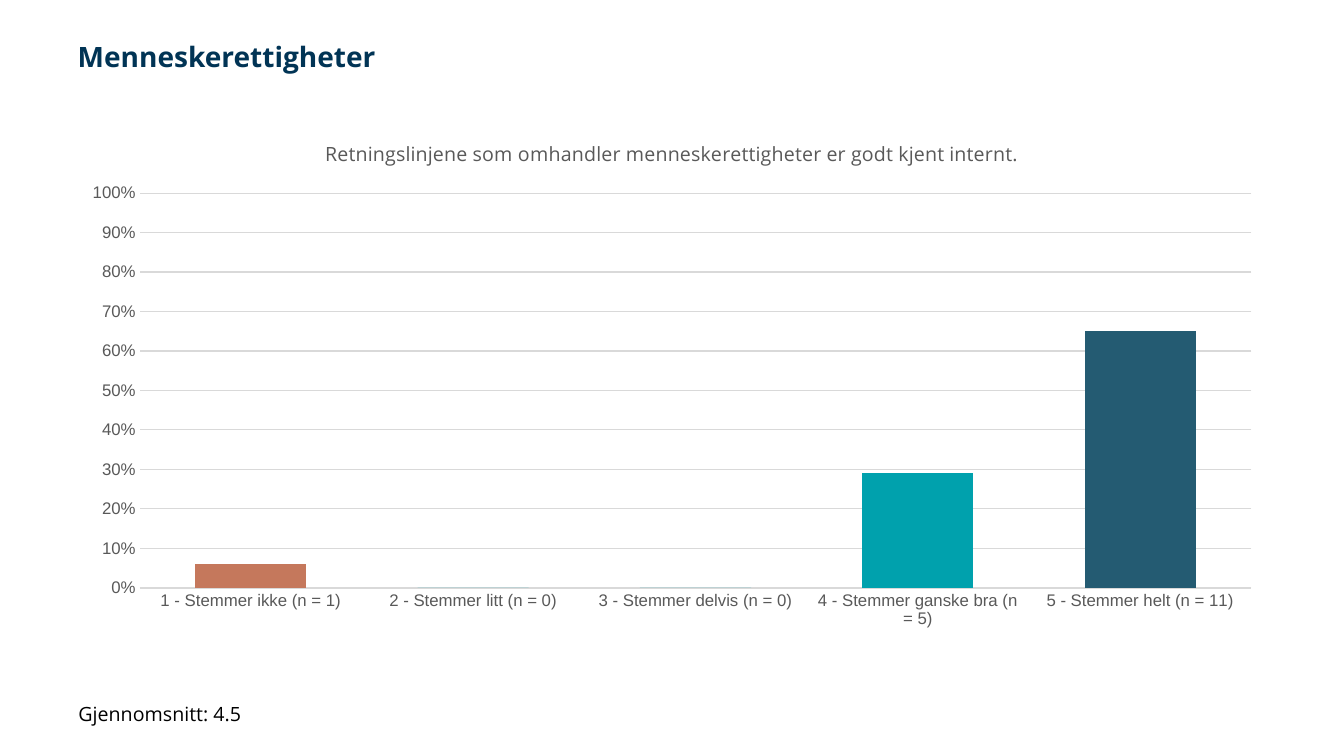
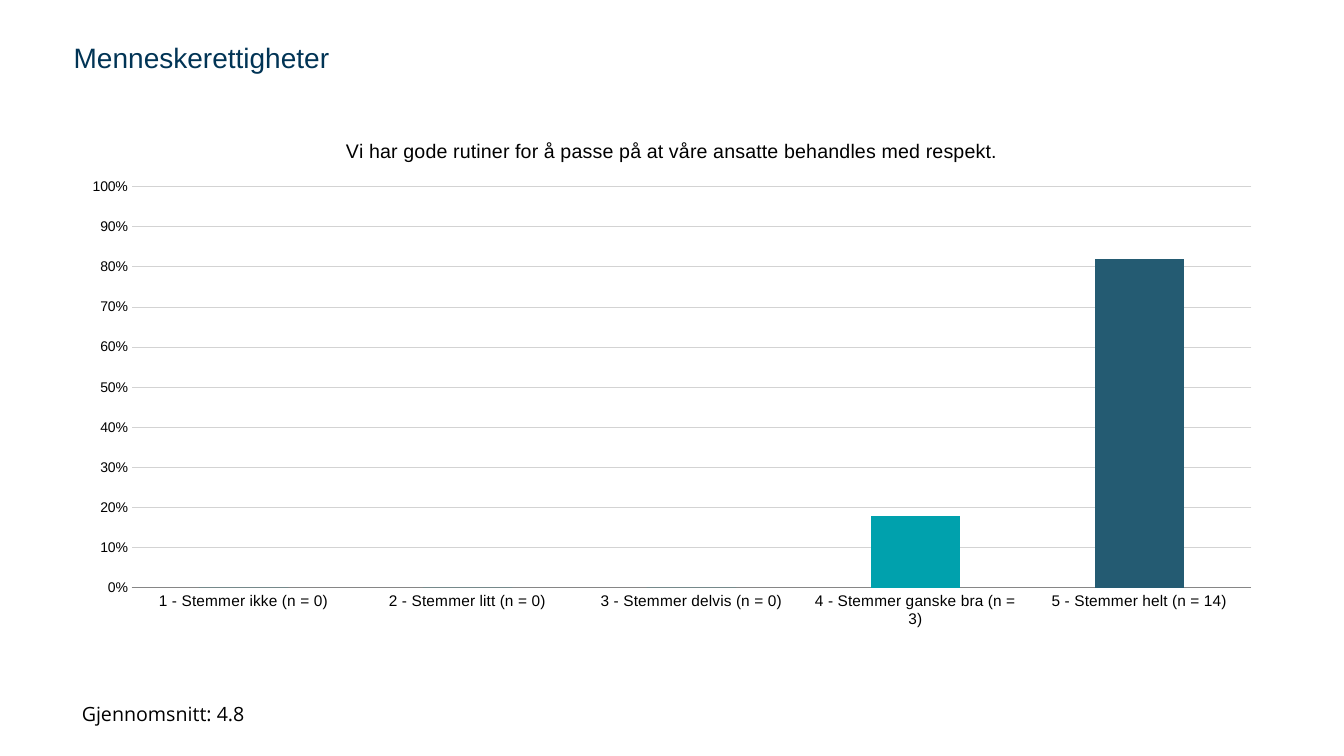
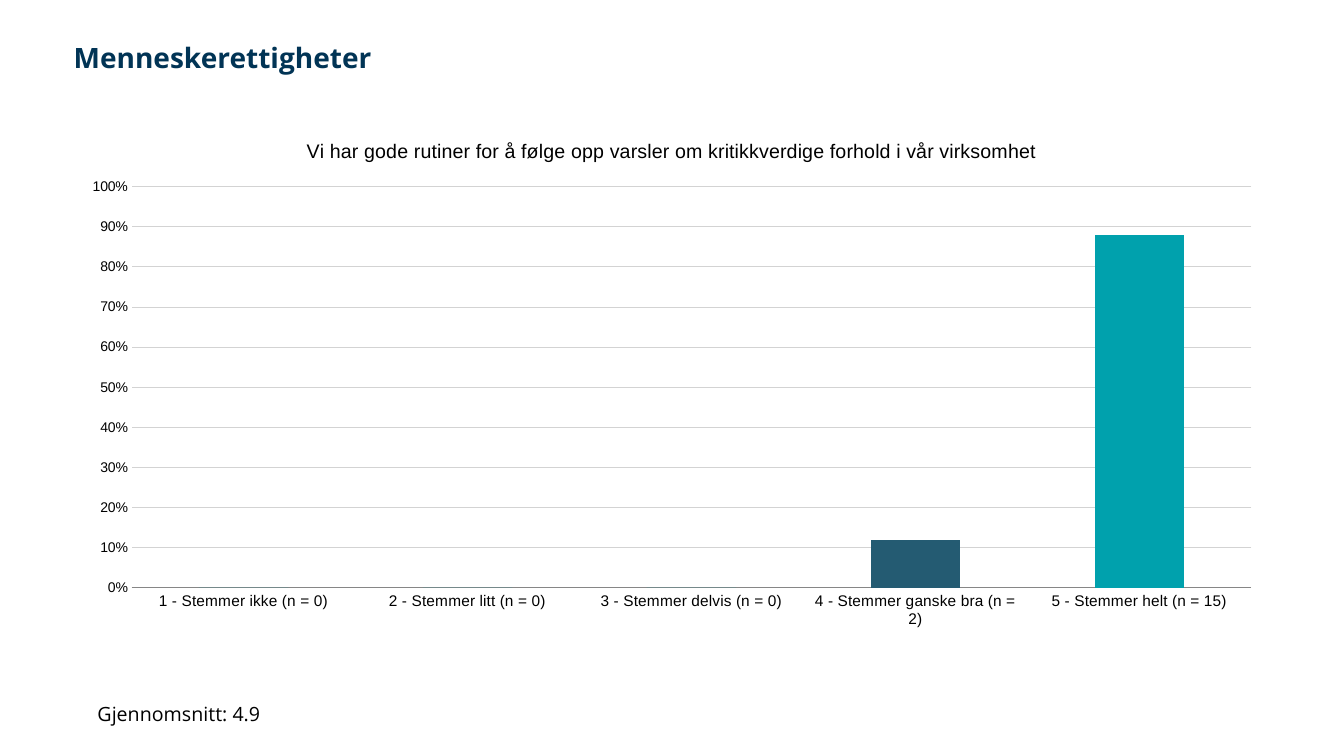
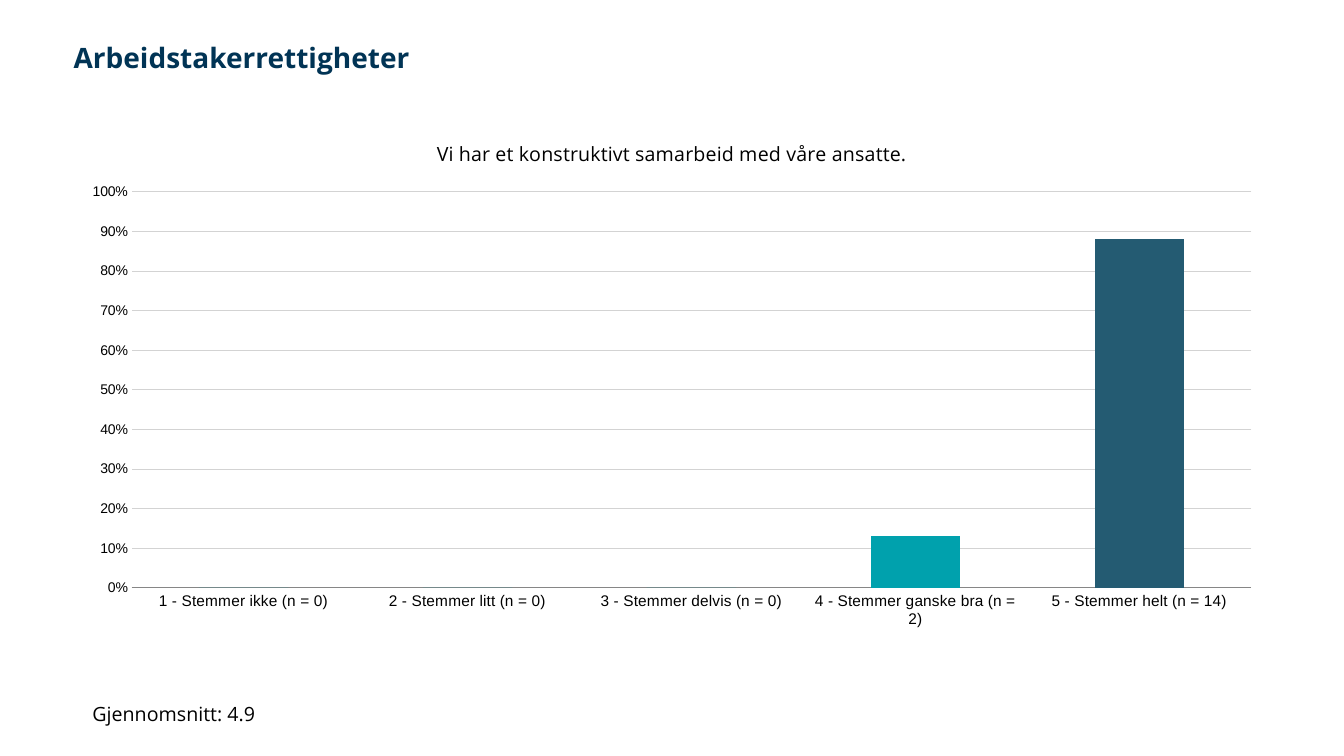
import pptx
import pptx.util
import pptx.dml.color
import pptx.chart.data
import pptx.enum.chart
import pptx.enum.text

Pt = pptx.util.Pt
WIDE, HIGH = pptx.util.Inches(13.33), pptx.util.Inches(7.5)

COLORS = {
    "navy": "013455", "black": "000000", "grey": "595959",
    "axis": "868686", "pale": "D9D9D9", "grid": "D3D3D3",
    "rust": "C5785C", "teal": "00A1AD", "blue": "245B72",
}
SANS, ARIAL = "Open Sans", "Arial"
LEFT = pptx.enum.text.PP_ALIGN.LEFT
MID = pptx.enum.text.PP_ALIGN.CENTER

# Shares of the slide, in percent
EDGE, SPAN = 5.1, 89.8

ANSWERS = ["Stemmer ikke", "Stemmer litt", "Stemmer delvis",
           "Stemmer ganske bra", "Stemmer helt"]

# Two chart looks: text and line colours, label sizes, bar spacing
SOFT = {"text": "grey", "line": "pale", "width": 1, "grid": "pale",
        "cat": 12, "val": 12, "gap": 100}
PLAIN = {"text": "black", "line": "axis", "width": 0.75, "grid": "grid",
         "cat": 11, "val": 10, "gap": 150}

SLIDES = [
    {"title": "Menneskerettigheter", "face": SANS, "spot": (5.03, 5.47),
     "ask": "Retningslinjene som omhandler menneskerettigheter er godt kjent internt.",
     "font": SANS, "look": SOFT, "counts": [1, 0, 0, 5, 11],
     "shares": [0.06, 0, 0, 0.29, 0.65],
     "bars": {0: "rust", 3: "teal", 4: "blue"},
     "mean": "4.5", "width": 17.48, "align": LEFT},
    {"title": "Menneskerettigheter", "face": ARIAL, "spot": (4.73, 5.6),
     "ask": "Vi har gode rutiner for å passe på at våre ansatte behandles med respekt.",
     "font": ARIAL, "look": PLAIN, "counts": [0, 0, 0, 3, 14],
     "shares": [0, 0, 0, 0.18, 0.82],
     "bars": {3: "teal", 4: "blue"},
     "mean": "4.8", "width": 14.1, "align": MID},
    {"title": "Menneskerettigheter", "face": SANS, "spot": (4.73, 5.6),
     "ask": "Vi har gode rutiner for å følge opp varsler om kritikkverdige forhold i vår virksomhet",
     "font": ARIAL, "look": PLAIN, "counts": [0, 0, 0, 2, 15],
     "shares": [0, 0, 0, 0.12, 0.88],
     "bars": {3: "blue", 4: "teal"},
     "mean": "4.9", "width": 16.43, "align": MID},
    {"title": "Arbeidstakerrettigheter", "face": SANS, "spot": (4.73, 5.6),
     "ask": "Vi har et konstruktivt samarbeid med våre ansatte.",
     "font": SANS, "look": PLAIN, "counts": [0, 0, 0, 2, 14],
     "shares": [0, 0, 0, 0.13, 0.88],
     "bars": {3: "teal", 4: "blue"},
     "mean": "4.9", "width": 15.68, "align": MID},
]


def rgb(name):
    return pptx.dml.color.RGBColor.from_string(COLORS[name])


def area(left, top, width, height):
    """Turn percent of the slide into lengths."""
    return (int(WIDE * left / 100), int(HIGH * top / 100),
            int(WIDE * width / 100), int(HIGH * height / 100))


def style(font, face, size, color, bold=False):
    font.name, font.size, font.bold = face, Pt(size), bold
    font.color.rgb = rgb(color)


def stroke(line, color, width):
    line.color.rgb = rgb(color)
    line.width = Pt(width)


def head(slide, text, face, spot):
    shape = slide.shapes.title
    shape.left, shape.top, shape.width, shape.height = area(*spot, SPAN, 5.2)
    frame = shape.text_frame
    frame.text = text
    frame.word_wrap = True
    frame.auto_size = pptx.enum.text.MSO_AUTO_SIZE.NONE
    frame.vertical_anchor = pptx.enum.text.MSO_ANCHOR.TOP
    para = frame.paragraphs[0]
    para.alignment = LEFT
    para.line_spacing = 0.8
    para.space_before = Pt(0)
    style(para.font, face, 20, "navy", face == SANS)


def scale(axis, size, look):
    """Format what both axes share."""
    axis.major_tick_mark = pptx.enum.chart.XL_TICK_MARK.NONE
    axis.minor_tick_mark = pptx.enum.chart.XL_TICK_MARK.NONE
    style(axis.tick_labels.font, ARIAL, size, look["text"])


def graph(slide, page):
    look = page["look"]
    data = pptx.chart.data.CategoryChartData(number_format="0%")
    data.categories = [f"{rank} - {answer} (n = {count})" for rank, (answer, count)
                       in enumerate(zip(ANSWERS, page["counts"]), 1)]
    data.add_series("Series 1", page["shares"])
    chart = slide.shapes.add_chart(
        pptx.enum.chart.XL_CHART_TYPE.COLUMN_CLUSTERED,
        *area(EDGE, 15.73, SPAN, 68.67), data).chart
    style(chart.font, ARIAL, 10, "black")
    chart.has_legend = False

    # Question above the bars
    chart.has_title = True
    chart.chart_title.include_in_layout = False
    frame = chart.chart_title.text_frame
    frame.text = page["ask"]
    style(frame.paragraphs[0].font, page["font"], 14, look["text"])

    # Axes
    cats, vals = chart.category_axis, chart.value_axis
    scale(cats, look["cat"], look)
    stroke(cats.format.line, look["line"], look["width"])
    scale(vals, look["val"], look)
    vals.format.line.fill.background()
    vals.minimum_scale, vals.maximum_scale, vals.major_unit = 0, 1, 0.1
    vals.tick_labels.number_format = "0%"
    vals.tick_labels.number_format_is_linked = False
    stroke(vals.major_gridlines.format.line, look["grid"], 0.75)

    # Bars
    plot = chart.plots[0]
    plot.vary_by_categories = False
    plot.gap_width = look["gap"]
    series = plot.series[0]
    series.invert_if_negative = False
    series.format.fill.solid()
    series.format.fill.fore_color.rgb = rgb("teal")
    for index, color in page["bars"].items():
        fill = series.points[index].format.fill
        fill.solid()
        fill.fore_color.rgb = rgb(color)


def foot(slide, mean, width, align):
    frame = slide.shapes.add_textbox(*area(EDGE, 91.6, width, 5.6)).text_frame
    frame.word_wrap = True
    frame.vertical_anchor = pptx.enum.text.MSO_ANCHOR.MIDDLE
    frame.text = f"Gjennomsnitt: {mean}"
    para = frame.paragraphs[0]
    para.alignment = align
    style(para.font, SANS, 14, "black")


def main():
    deck = pptx.Presentation()
    deck.slide_width, deck.slide_height = WIDE, HIGH
    layout = deck.slide_layouts.get_by_name("Title Only")
    for page in SLIDES:
        slide = deck.slides.add_slide(layout)
        head(slide, page["title"], page["face"], page["spot"])
        graph(slide, page)
        foot(slide, page["mean"], page["width"], page["align"])
    deck.save("out.pptx")


if __name__ == "__main__":
    main()
